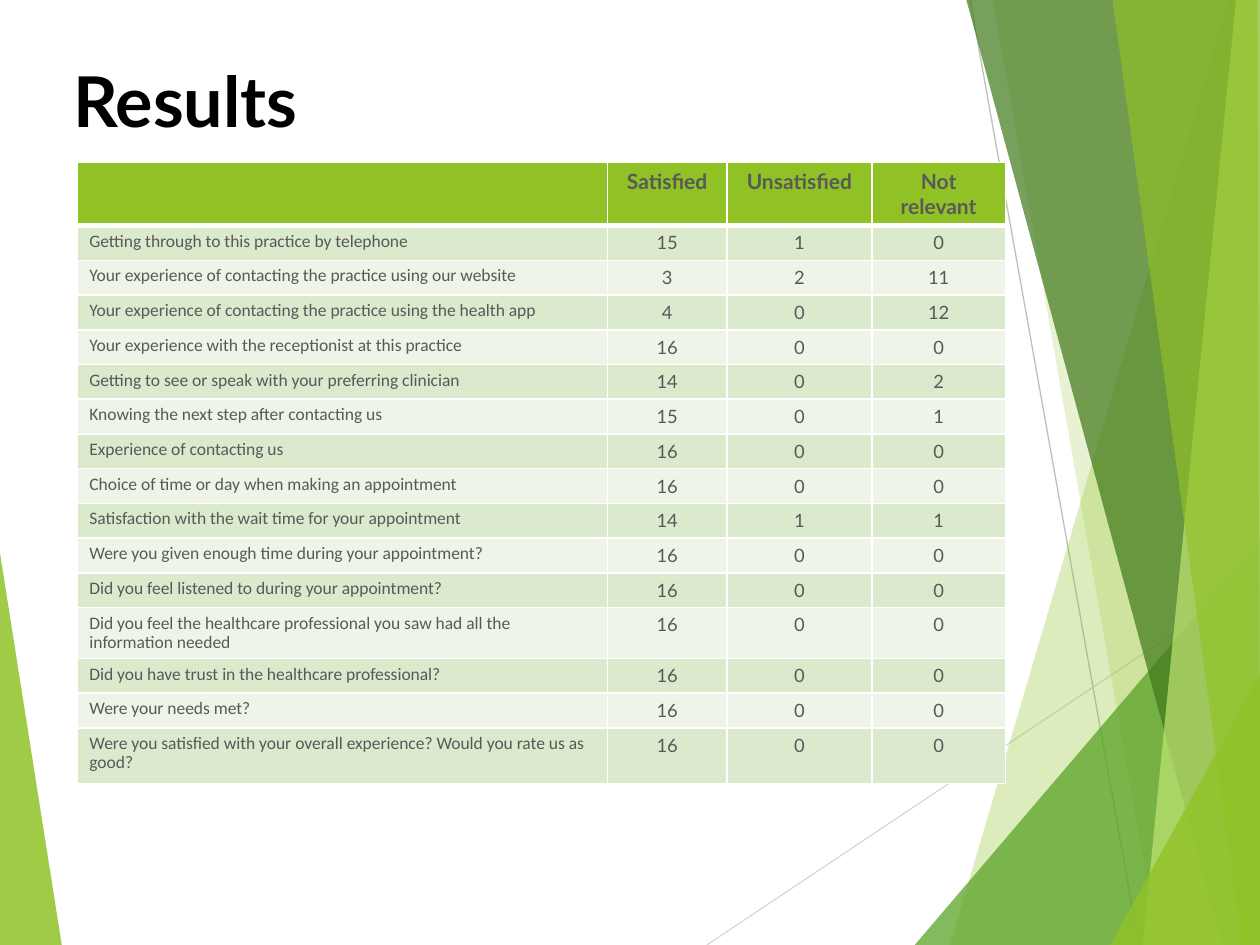
import dataclasses

import lxml.etree
import pptx
import pptx.dml.color
import pptx.enum.text
import pptx.oxml.ns
import pptx.util

Inches = pptx.util.Inches
Align = pptx.enum.text.PP_ALIGN
Anchor = pptx.enum.text.MSO_ANCHOR
qn = pptx.oxml.ns.qn


@dataclasses.dataclass(frozen=True)
class Theme:
    heading_font: str = "Lato"
    question_font: str = "Calibri"
    title_size: float = 40
    header_size: float = 12
    count_size: float = 10.5
    question_size: float = 10
    title_color: str = "000000"
    text_color: str = "595959"
    lime: str = "90C226"
    green: str = "54A021"
    forest: str = "3F7819"
    pale_lime: str = "C0E474"
    bands: tuple = ("DBE9CD", "EEF4E8")
    border: str = "FFFFFF"
    light_line: str = "D9D9D9"
    dark_line: str = "BFBFBF"


THEME = Theme()
WIDTH, HEIGHT = 10, 7.5

FACETS = [
    ([(0, 4.39), (0.49, HEIGHT), (0, HEIGHT)], THEME.lime, 85),
    ([(9.75, 0), (7.54, HEIGHT), (WIDTH, HEIGHT), (WIDTH, 0)], THEME.lime, 30),
    ([(7.88, 0), (9.19, HEIGHT), (WIDTH, HEIGHT), (WIDTH, 0)], THEME.lime, 20),
    ([(7.26, HEIGHT), (WIDTH, 4.29), (WIDTH, HEIGHT)], THEME.green, 72),
    ([(7.67, 0), (9.7, HEIGHT), (WIDTH, HEIGHT), (WIDTH, 0)], THEME.forest, 70),
    ([(9.81, 0), (9.07, HEIGHT), (WIDTH, HEIGHT), (WIDTH, 0)], THEME.pale_lime, 70),
    ([(8.83, 0), (9.86, HEIGHT), (WIDTH, HEIGHT), (9.98, 0)], THEME.lime, 65),
    ([(8.81, HEIGHT), (WIDTH, 5.35), (WIDTH, HEIGHT)], THEME.lime, 80),
]

HEADERS = ["", "Satisfied", "Unsatisfied", "Not relevant"]
ANSWERS = [
    ("Getting through to this practice by telephone", 15, 1, 0),
    ("Your experience of contacting the practice using our website", 3, 2, 11),
    ("Your experience of contacting the practice using the health app", 4, 0, 12),
    ("Your experience with the receptionist at this practice", 16, 0, 0),
    ("Getting to see or speak with your preferring clinician", 14, 0, 2),
    ("Knowing the next step after contacting us", 15, 0, 1),
    ("Experience of contacting us", 16, 0, 0),
    ("Choice of time or day when making an appointment", 16, 0, 0),
    ("Satisfaction with the wait time for your appointment", 14, 1, 1),
    ("Were you given enough time during your appointment?", 16, 0, 0),
    ("Did you feel listened to during your appointment?", 16, 0, 0),
    ("Did you feel the healthcare professional you saw had all the information needed", 16, 0, 0),
    ("Did you have trust in the healthcare professional?", 16, 0, 0),
    ("Were your needs met?", 16, 0, 0),
    ("Were you satisfied with your overall experience? Would you rate us as good?", 16, 0, 0),
]
COLUMN_WIDTHS = [4.21, 0.95, 1.15, 1.06]
ROW_HEIGHTS = [0.5] + [0.27] * 11 + [0.4] + [0.27] * 2 + [0.44]


def rgb(color):
    return pptx.dml.color.RGBColor.from_string(color)


def write_text(frame, text, *, font, size, color=THEME.text_color, bold=False,
               align=Align.LEFT, spacing=1.0):
    para = frame.paragraphs[0]
    para.alignment = align
    para.line_spacing = spacing
    para.space_before = pptx.util.Pt(0)
    span = para.add_run()
    span.text = text
    span.font.name = font
    span.font.size = pptx.util.Pt(size)
    span.font.bold = bold
    span.font.color.rgb = rgb(color)


class PageBuilder:
    def __init__(self, page, theme):
        self.page = page
        self.theme = theme

    def title(self, text, left, top, width, height):
        box = self.page.shapes.title
        box.left, box.top = Inches(left), Inches(top)
        box.width, box.height = Inches(width), Inches(height)
        frame = box.text_frame
        frame.auto_size = pptx.enum.text.MSO_AUTO_SIZE.NONE
        frame.vertical_anchor = Anchor.TOP
        write_text(frame, text, font=self.theme.heading_font, size=self.theme.title_size,
                   color=self.theme.title_color, bold=True)

    def facet(self, points, color, opacity):
        corners = [(Inches(x), Inches(y)) for x, y in points]
        builder = self.page.shapes.build_freeform(*corners[0])
        builder.add_line_segments(corners[1:], close=True)
        shape = builder.convert_to_shape()
        shape.shadow.inherit = False
        shape.line.fill.background()
        shape.fill.solid()
        shape.fill.fore_color.rgb = rgb(color)
        tint = shape.fill._xPr.find(qn("a:solidFill"))[0]
        lxml.etree.SubElement(tint, qn("a:alpha"), val=str(opacity * 1000))

    def line(self, start, end, color):
        ends = [Inches(value) for value in (*start, *end)]
        connector = self.page.shapes.add_connector(pptx.enum.shapes.MSO_CONNECTOR.STRAIGHT, *ends)
        connector.line.color.rgb = rgb(color)
        connector.line.width = pptx.util.Pt(0.75)
        lxml.etree.SubElement(connector._element.spPr, qn("a:effectLst"))

    def cell(self, cell, fill, bottom=1):
        properties = cell._tc.get_or_add_tcPr()
        for side, points in (("L", 1), ("R", 1), ("T", 1), ("B", bottom)):
            edge = lxml.etree.SubElement(properties, qn(f"a:ln{side}"), w=str(pptx.util.Pt(points)))
            paint = lxml.etree.SubElement(edge, qn("a:solidFill"))
            lxml.etree.SubElement(paint, qn("a:srgbClr"), val=self.theme.border)
        cell.fill.solid()
        cell.fill.fore_color.rgb = rgb(fill)

    def table(self, headers, answers, left, top, widths, heights):
        theme = self.theme
        table = self.page.shapes.add_table(
            len(heights), len(widths), Inches(left), Inches(top),
            Inches(sum(widths)), Inches(sum(heights))).table
        table.horz_banding = False
        for column, width in zip(table.columns, widths):
            column.width = Inches(width)
        for row, height in zip(table.rows, heights):
            row.height = Inches(height)
        for cell, text in zip(table.rows[0].cells, headers):
            self.cell(cell, theme.lime, bottom=3)
            if text:
                write_text(cell.text_frame, text, font=theme.heading_font,
                           size=theme.header_size, bold=True, align=Align.CENTER)
        for index, (question, *counts) in enumerate(answers):
            cells = list(table.rows[index + 1].cells)
            for cell in cells:
                self.cell(cell, theme.bands[index % 2])
            write_text(cells[0].text_frame, question, font=theme.question_font,
                       size=theme.question_size, spacing=0.9)
            for cell, count in zip(cells[1:], counts):
                write_text(cell.text_frame, str(count), font=theme.heading_font,
                           size=theme.count_size, align=Align.CENTER)


def main():
    deck = pptx.Presentation()
    deck.slide_width, deck.slide_height = Inches(WIDTH), Inches(HEIGHT)
    page = deck.slides.add_slide(deck.slide_layouts.get_by_name("Title Only"))
    builder = PageBuilder(page, THEME)
    left_facet, *right_facets = FACETS
    builder.facet(*left_facet)
    builder.line((5.61, HEIGHT), (WIDTH, 4.57), THEME.light_line)
    builder.line((7.7, 0), (9.04, HEIGHT), THEME.dark_line)
    for facet in right_facets:
        builder.facet(*facet)
    builder.title("Results", 0.48, 0.41, 2.6, 0.77)
    builder.table(HEADERS, ANSWERS, 0.61, 1.29, COLUMN_WIDTHS, ROW_HEIGHTS)
    deck.save("out.pptx")


if __name__ == "__main__":
    main()
